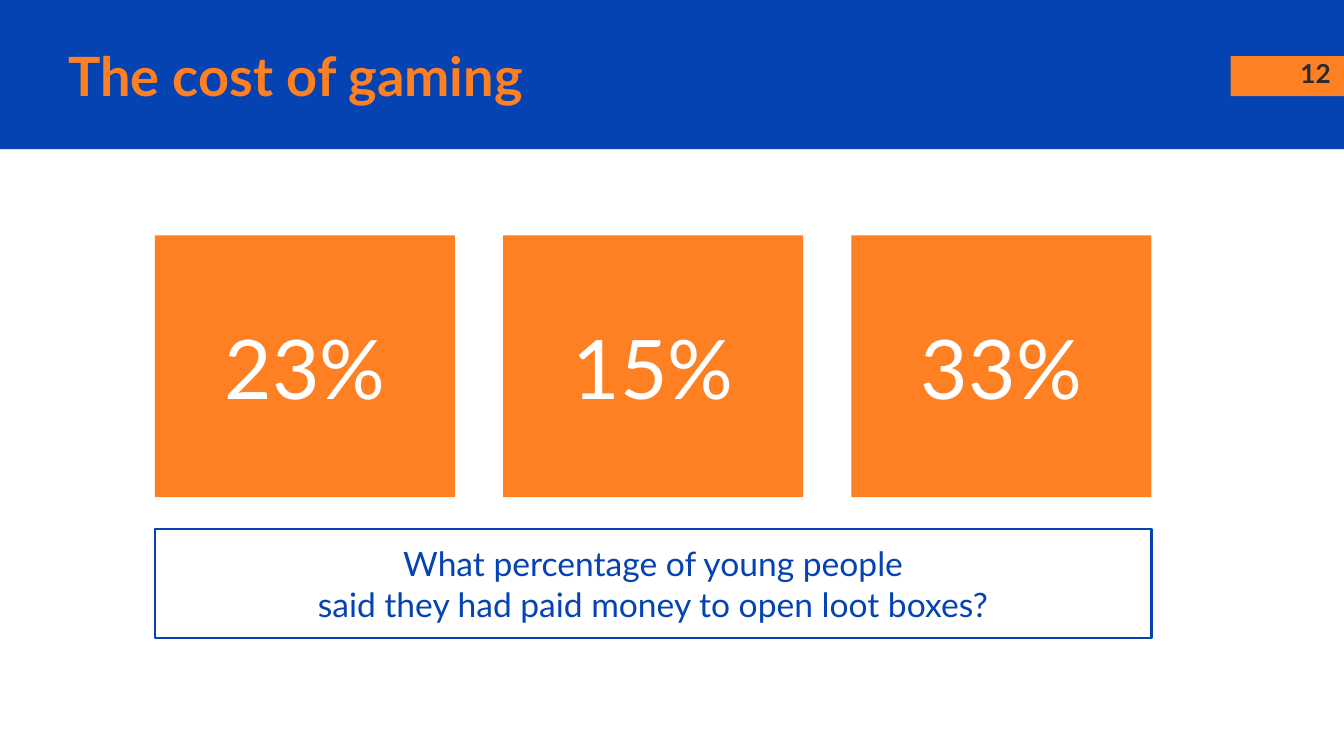
from pptx import Presentation
from pptx import util as u
from pptx.dml.color import RGBColor
from pptx.enum import shapes, text

TITLE = "The cost of gaming"
PAGE_NUMBER = "12"
ANSWERS = ["23%", "15%", "33%"]
QUESTION = [
    "What percentage of young people",
    "said they had paid money to open loot boxes?",
]

COLOURS = {"blue": "0543B3", "orange": "FF8022", "white": "FFFFFF", "ink": "262A33"}
FONT = "Lato"
PAGE_W, PAGE_H = 25.4, 14.29
GRID_LEFT, TILE_TOP, TILE_W, TILE_H, GAP = 2.93, 4.45, 5.67, 4.95, 0.91
GRID_W = len(ANSWERS) * TILE_W + (len(ANSWERS) - 1) * GAP
MIDDLE, TOP = text.MSO_ANCHOR.MIDDLE, text.MSO_ANCHOR.TOP
LEFT, CENTER, RIGHT = text.PP_ALIGN.LEFT, text.PP_ALIGN.CENTER, text.PP_ALIGN.RIGHT


def rgb(name):
    return RGBColor.from_string(COLOURS[name])


def add_rectangle(slide, box, fill=None, line=None):
    rectangle = slide.shapes.add_shape(
        shapes.MSO_SHAPE.RECTANGLE, *(u.Cm(length) for length in box))
    rectangle.shadow.inherit = False
    if fill:
        rectangle.fill.solid()
        rectangle.fill.fore_color.rgb = rgb(fill)
    else:
        rectangle.fill.background()
    if line:
        rectangle.line.color.rgb = rgb(line)
        rectangle.line.width = u.Pt(1.5)
    else:
        rectangle.line.fill.background()
    return rectangle


def write(shape, lines, size, colour, bold=False, align=CENTER, anchor=MIDDLE):
    frame = shape.text_frame
    inset = u.Cm(0.25)
    frame_format = {
        "word_wrap": True, "vertical_anchor": anchor,
        "margin_left": inset, "margin_right": inset,
        "margin_top": inset, "margin_bottom": inset,
    }
    for attribute, value in frame_format.items():
        setattr(frame, attribute, value)
    font_format = {"name": FONT, "size": u.Pt(size), "bold": bold}
    for index, line in enumerate(lines):
        paragraph = frame.add_paragraph() if index else frame.paragraphs[0]
        paragraph.alignment = align
        run = paragraph.add_run()
        run.text = line
        for attribute, value in font_format.items():
            setattr(run.font, attribute, value)
        run.font.color.rgb = rgb(colour)


def add_label(slide, box, line, **style):
    label = slide.shapes.add_textbox(*(u.Cm(length) for length in box))
    write(label, [line], **style)


def main():
    deck = Presentation()
    deck.slide_width, deck.slide_height = u.Cm(PAGE_W), u.Cm(PAGE_H)
    slide = deck.slides.add_slide(deck.slide_layouts[6])

    add_rectangle(slide, (0, 0, PAGE_W, 2.82), fill="blue")
    add_rectangle(slide, (23.26, 1.06, 2.14, 0.76), fill="orange")
    add_label(slide, (23.88, 0.84, 1.52, 1.09), PAGE_NUMBER,
              size=14, colour="ink", bold=True, align=RIGHT, anchor=TOP)
    add_label(slide, (1.04, 0.71, 21.49, 1.42), TITLE,
              size=29, colour="orange", bold=True, align=LEFT)

    for column, answer in enumerate(ANSWERS):
        left = GRID_LEFT + column * (TILE_W + GAP)
        tile = add_rectangle(slide, (left, TILE_TOP, TILE_W, TILE_H), fill="orange")
        write(tile, [answer], size=44, colour="white")

    question = add_rectangle(slide, (GRID_LEFT, 10, GRID_W, 2.06), line="blue")
    write(question, QUESTION, size=18, colour="blue")

    deck.save("out.pptx")


if __name__ == "__main__":
    main()
